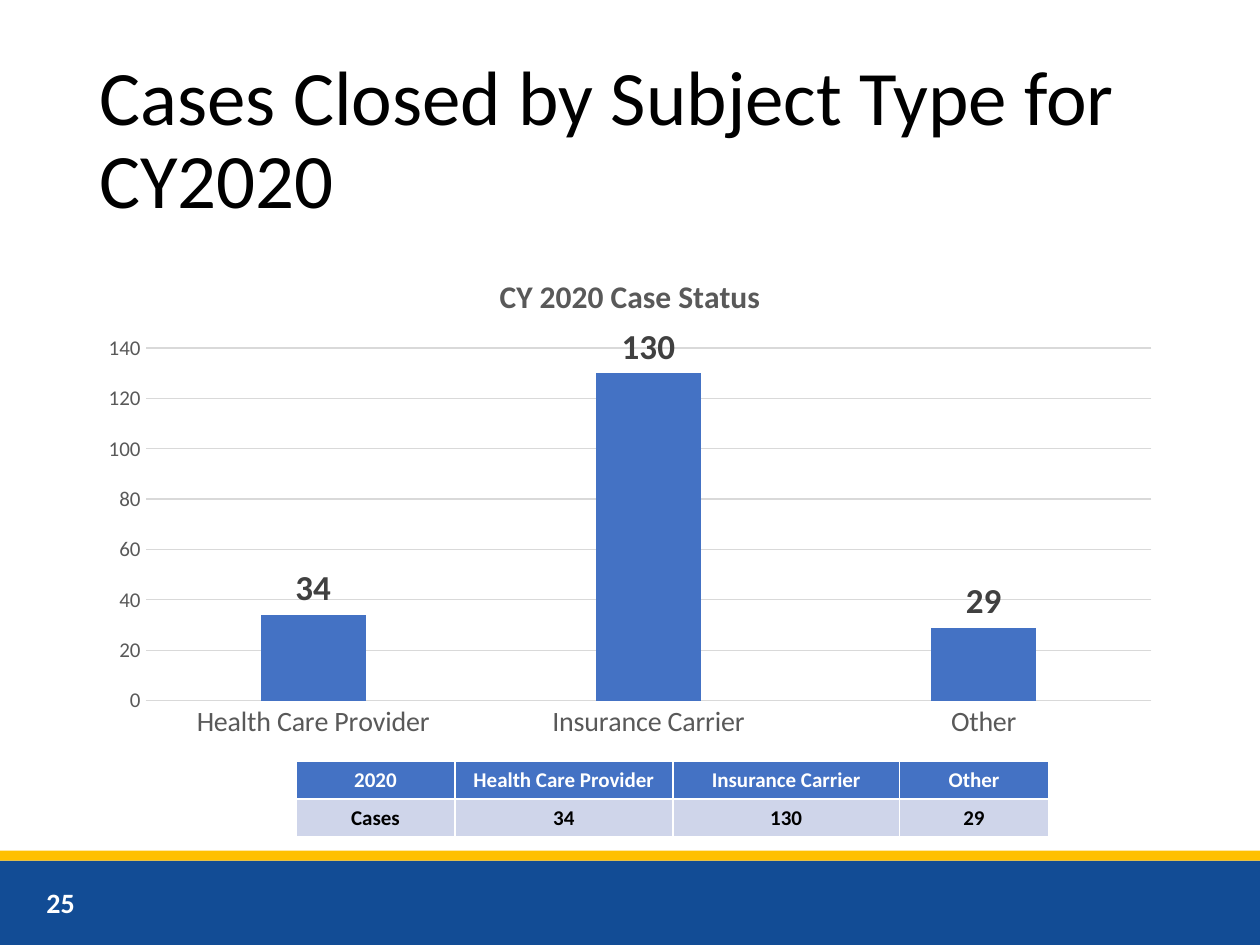
from dataclasses import dataclass

from lxml import etree
from pptx import Presentation
from pptx.chart import data
from pptx.dml.color import RGBColor
from pptx.enum import chart as ch, shapes, text
from pptx.oxml import ns
from pptx.util import Inches, Pt


@dataclass(frozen=True)
class Theme:
    font: str = "Calibri"
    black: str = "000000"
    white: str = "FFFFFF"
    navy: str = "124C95"
    gold: str = "FFC000"
    blue: str = "4472C4"
    pale: str = "CFD5EA"
    grey: str = "595959"
    dark: str = "404040"
    grid: str = "D9D9D9"
    title: int = 44
    value: int = 20
    head: int = 18
    label: int = 16
    small: int = 12


@dataclass(frozen=True)
class Box:
    left: float
    top: float
    width: float
    height: float

    def place(self) -> list:
        return [Inches(n) for n in (self.left, self.top, self.width, self.height)]


@dataclass(frozen=True)
class Band:
    box: Box
    color: str


@dataclass(frozen=True)
class Label:
    box: Box
    words: str
    size: int
    color: str
    bold: bool = False
    space: float = 1.0


T = Theme()
CASES = {"Health Care Provider": 34, "Insurance Carrier": 130, "Other": 29}
BANDS = [
    Band(Box(0, 6.83, 10, 0.67), T.navy),
    Band(Box(0, 6.75, 10, 0.08), T.gold),
]
LABELS = [
    Label(Box(0.69, 0.4, 8.62, 1.45), "Cases Closed by Subject Type for CY2020",
          T.title, T.black, space=0.9),
    Label(Box(0.27, 6.96, 2.25, 0.4), "25", T.label, T.white, bold=True),
]
WIDTHS = (1.26, 1.73, 1.8, 1.18)


def style(font, size: int, color: str, bold: bool = False) -> None:
    font.name, font.size, font.bold = T.font, Pt(size), bold
    font.color.rgb = RGBColor.from_string(color)


def paint(fill, color: str) -> None:
    fill.solid()
    fill.fore_color.rgb = RGBColor.from_string(color)


def rule(line) -> None:
    line.color.rgb = RGBColor.from_string(T.grid)
    line.width = Pt(0.75)


def draw_band(slide, band: Band) -> None:
    shape = slide.shapes.add_shape(shapes.MSO_SHAPE.RECTANGLE, *band.box.place())
    shape.shadow.inherit = False
    paint(shape.fill, band.color)
    shape.line.fill.background()


def draw_label(slide, label: Label) -> None:
    frame = slide.shapes.add_textbox(*label.box.place()).text_frame
    frame.word_wrap = True
    frame.vertical_anchor = text.MSO_ANCHOR.MIDDLE
    para = frame.paragraphs[0]
    para.text = label.words
    para.line_spacing = label.space
    style(para.font, label.size, label.color, label.bold)


def draw_chart(slide, box: Box) -> None:
    cases = data.CategoryChartData()
    cases.categories = list(CASES)
    cases.add_series("Series 1", list(CASES.values()))
    chart = slide.shapes.add_chart(
        ch.XL_CHART_TYPE.COLUMN_CLUSTERED, *box.place(), cases).chart
    style(chart.font, 10, T.black)
    chart.has_legend = False
    para = chart.chart_title.text_frame.paragraphs[0]
    para.text = "CY 2020 Case Status"
    style(para.font, T.head, T.grey, True)

    for axis, size in ((chart.category_axis, T.label), (chart.value_axis, T.small)):
        axis.major_tick_mark = axis.minor_tick_mark = ch.XL_TICK_MARK.NONE
        style(axis.tick_labels.font, size, T.grey)
    rule(chart.category_axis.format.line)
    chart.value_axis.format.line.fill.background()
    rule(chart.value_axis.major_gridlines.format.line)

    plot = chart.plots[0]
    plot.gap_width, plot.overlap = 219, -27
    plot.vary_by_categories = False
    series = plot.series[0]
    paint(series.format.fill, T.blue)
    marks = series.data_labels
    marks.show_value = True
    marks.position = ch.XL_LABEL_POSITION.OUTSIDE_END
    style(marks.font, T.value, T.dark, True)


def edge(cell) -> None:
    """Give a cell white borders, which must come before its fill."""
    props = cell._tc.get_or_add_tcPr()
    for spot, side in enumerate(("lnL", "lnR", "lnT", "lnB")):
        line = etree.Element(ns.qn(f"a:{side}"), w=str(Pt(1)))
        solid = etree.SubElement(line, ns.qn("a:solidFill"))
        etree.SubElement(solid, ns.qn("a:srgbClr"), val=T.white)
        props.insert(spot, line)


def draw_table(slide, box: Box) -> None:
    rows = [("2020", *CASES), ("Cases", *CASES.values())]
    looks = [(T.blue, T.white), (T.pale, T.black)]
    table = slide.shapes.add_table(len(rows), len(WIDTHS), *box.place()).table
    for col, width in zip(table.columns, WIDTHS):
        col.width = Inches(width)
    for r, (row, (fill, color)) in enumerate(zip(rows, looks)):
        for c, words in enumerate(row):
            cell = table.cell(r, c)
            cell.margin_left = cell.margin_right = Inches(0.05)
            cell.margin_top = cell.margin_bottom = Inches(0.05)
            cell.vertical_anchor = text.MSO_ANCHOR.MIDDLE
            paint(cell.fill, fill)
            edge(cell)
            para = cell.text_frame.paragraphs[0]
            para.text = str(words)
            para.alignment = text.PP_ALIGN.CENTER
            style(para.font, T.small, color, True)


def main() -> None:
    deck = Presentation()
    deck.slide_width, deck.slide_height = Inches(10), Inches(7.5)
    slide = deck.slides.add_slide(deck.slide_layouts[6])
    paint(slide.background.fill, T.white)
    for band in BANDS:
        draw_band(slide, band)
    draw_chart(slide, Box(0.69, 2, 8.62, 3.95))
    for label in LABELS:
        draw_label(slide, label)
    draw_table(slide, Box(2.35, 6.04, sum(WIDTHS), 0.6))
    deck.save("out.pptx")


if __name__ == "__main__":
    main()
